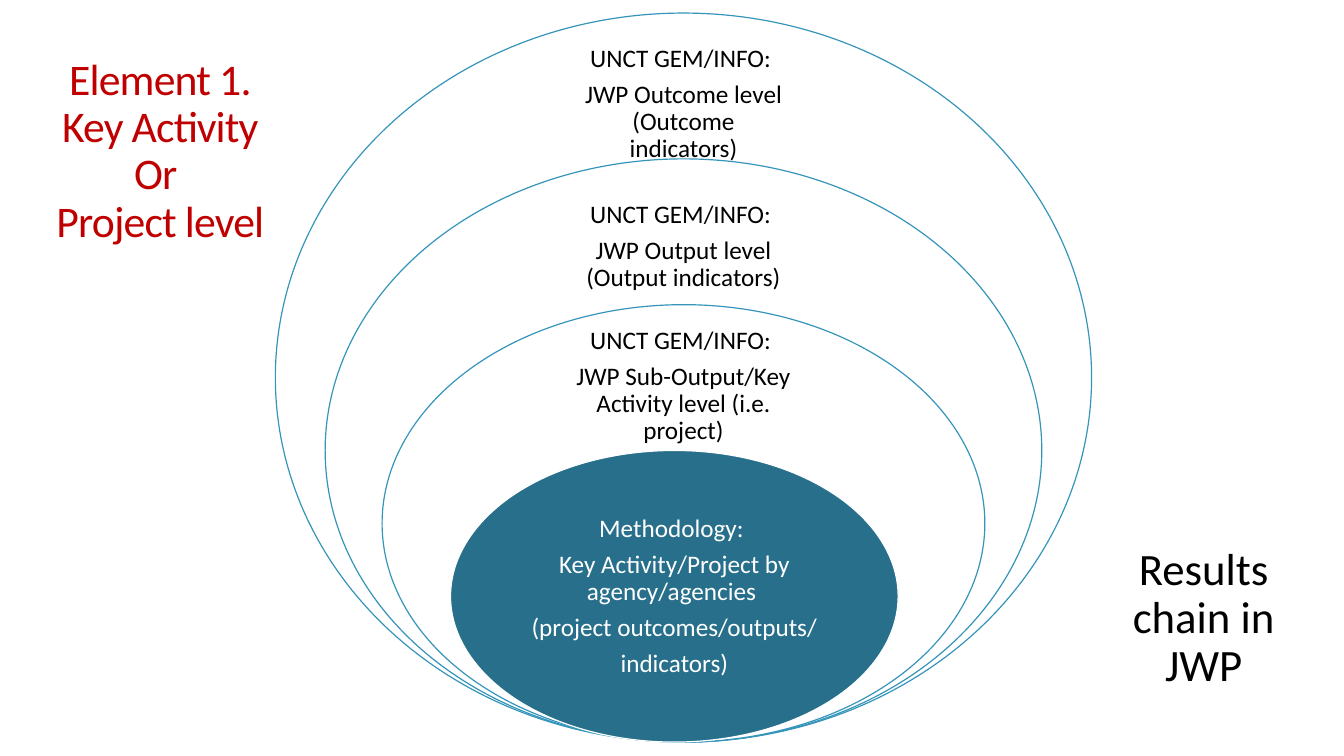
from dataclasses import dataclass

from lxml import etree
from pptx import Presentation
from pptx.dml.color import RGBColor
from pptx.enum import shapes, text
from pptx.oxml.ns import qn
from pptx.util import Cm, Pt


@dataclass(frozen=True)
class Theme:
    font: str = "Calibri"
    black: str = "000000"
    white: str = "FFFFFF"
    red: str = "C00000"
    outline: str = "3494BA"
    core: str = "276F8B"
    title_size: float = 31.2
    body_size: float = 32
    label_size: float = 18
    line_width: float = 0.85


THEME = Theme()

# Ring width, label (drop below ring top, width, height), label lines
RINGS = [
    (20.57, (0.91, 5.77, 2.77),
     ["UNCT GEM/INFO: ", "JWP Outcome level (Outcome indicators)"]),
    (18.06, (0.89, 6.32, 2.64),
     ["UNCT GEM/INFO: ", "JWP Output level (Output indicators)"]),
    (15.19, (0.81, 7.09, 2.49),
     ["UNCT GEM/INFO: ", "JWP Sub-Output/Key Activity level (i.e. project)"]),
]
CORE = (11.28, (1.85, 7.98, 3.68),
        ["Methodology: ", "Key Activity/Project by agency/agencies ",
         "(project outcomes/outputs/", "indicators)"])


def rgb(value):
    return RGBColor.from_string(value)


def place(s, box):
    s.left, s.top, s.width, s.height = (Cm(v) for v in box)


def write(tf, lines, size, color, before=0, after=0):
    """Fill a text frame with centred paragraphs."""
    tf.word_wrap = True
    tf.auto_size = text.MSO_AUTO_SIZE.NONE
    for i, line in enumerate(lines):
        p = tf.paragraphs[0] if i == 0 else tf.add_paragraph()
        p.text = line
        p.alignment = text.PP_ALIGN.CENTER
        p.line_spacing = 0.9
        p.space_before, p.space_after = Pt(before), Pt(after)
        p.font.name = THEME.font
        p.font.size = Pt(size)
        p.font.color.rgb = rgb(color)


def add_title(slide, box):
    s = slide.shapes.title
    place(s, box)
    tf = s.text_frame
    write(tf, ["Element 1.", "Key Activity", "Or ", "Project level"],
          THEME.title_size, THEME.red)
    tf.vertical_anchor = text.MSO_ANCHOR.MIDDLE
    for p in tf.paragraphs:
        for r in p.runs:
            r._r.get_or_add_rPr().set("spc", "-60")


def add_caption(slide, box):
    s = slide.placeholders[1]
    place(s, box)
    write(s.text_frame, ["Results chain in JWP"], THEME.body_size, THEME.black, before=12)
    pPr = s.text_frame.paragraphs[0]._p.get_or_add_pPr()
    pPr.set("marL", "0")
    pPr.set("indent", "0")
    bullet = etree.Element(qn("a:buNone"))
    pPr.find(qn("a:defRPr")).addprevious(bullet)


def add_ring(slide, box, label, lines, fill, outline, color):
    """Draw one ellipse with its label centred near the top of the box."""
    left, top, width, height = box
    s = slide.shapes.add_shape(shapes.MSO_SHAPE.OVAL, *(Cm(v) for v in box))
    s.shadow.inherit = False
    s.fill.solid()
    s.fill.fore_color.rgb = rgb(fill)
    s.line.color.rgb = rgb(outline)
    s.line.width = Pt(THEME.line_width)

    drop, label_width, label_height = label
    label_box = (left + (width - label_width) / 2, top + drop, label_width, label_height)
    tf = slide.shapes.add_textbox(*(Cm(v) for v in label_box)).text_frame
    tf.margin_left = tf.margin_right = tf.margin_top = tf.margin_bottom = Cm(0.36)
    tf.vertical_anchor = text.MSO_ANCHOR.MIDDLE
    write(tf, lines, THEME.label_size, color, after=0.35 * THEME.label_size)


def add_results_chain(slide, box):
    """Nest the rings on a common base, each a fifth of the box shorter."""
    left, top, width, height = box
    center = left + width / 2
    step = height / 5

    def ring_box(i, ring_width, shift=0):
        return (center + shift - ring_width / 2, top + i * step,
                ring_width, height - i * step)

    for i, (ring_width, label, lines) in enumerate(RINGS):
        add_ring(slide, ring_box(i, ring_width), label, lines,
                 THEME.white, THEME.outline, THEME.black)
    core_width, label, lines = CORE
    add_ring(slide, ring_box(len(RINGS), core_width, shift=-0.23), label, lines,
             THEME.core, THEME.white, THEME.white)


def main():
    prs = Presentation()
    prs.slide_width, prs.slide_height = Cm(33.87), Cm(19.05)
    slide = prs.slides.add_slide(prs.slide_layouts[1])
    add_results_chain(slide, (6.94, 0.33, 20.57, 18.37))
    add_caption(slide, (27.81, 13.64, 5.05, 4.7))
    add_title(slide, (0, 0.81, 8.08, 6.05))
    prs.save("out.pptx")


if __name__ == "__main__":
    main()
